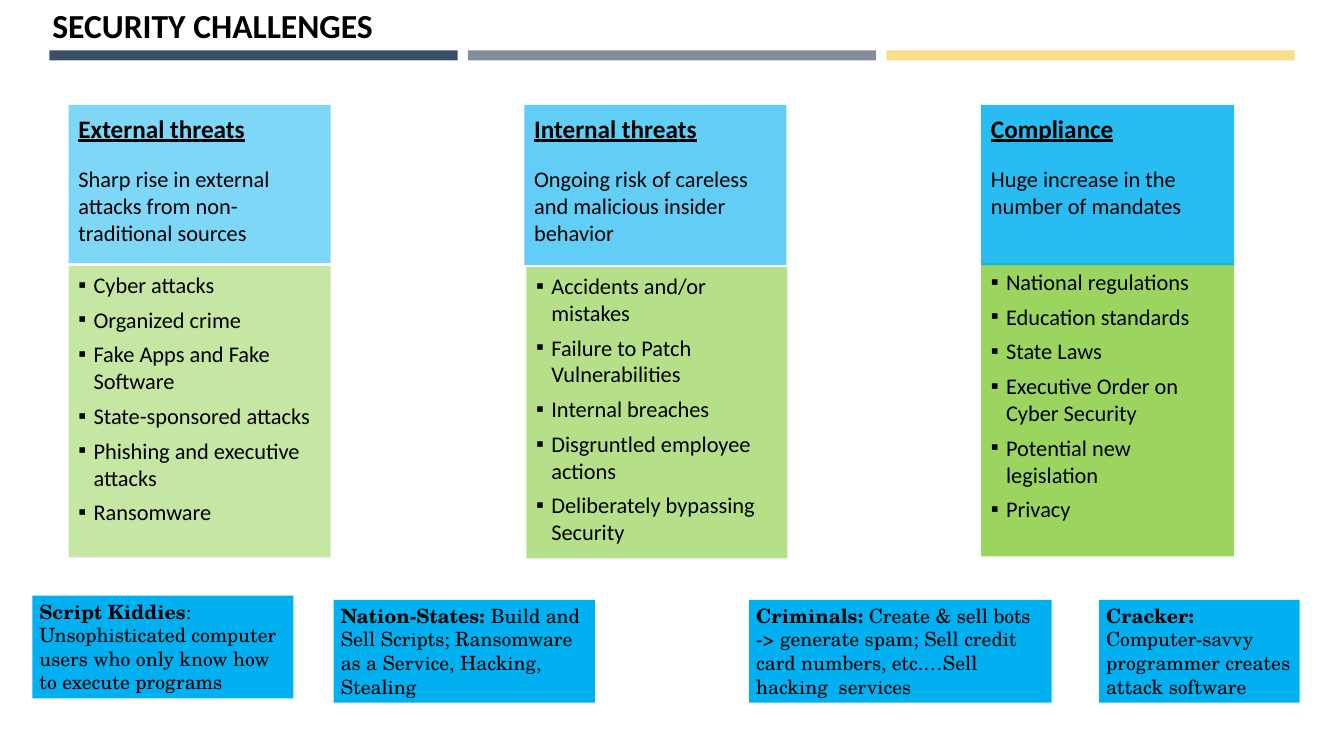
from pptx import Presentation
from pptx import util as u
from pptx.dml import color
from pptx.enum import shapes, text
from pptx.oxml import xmlchemy
from pptx.oxml import ns
from lxml import etree

PX = 9144  # EMU per px, 100 px to the inch
BLACK, BLUE, GREEN = "000000", "00B0F0", "92D050"

# Each box is left, top, width, height
THREATS = [
    {"title": "External threats",
     "summary": "Sharp rise in external attacks from non-traditional sources",
     "header_box": (68, 104, 260, 157), "header_opacity": 50,
     "list_box": (68, 264, 260, 289), "list_opacity": 52,
     "items": ["Cyber attacks", "Organized crime", "Fake Apps and Fake Software",
               "State-sponsored attacks", "Phishing and executive attacks", "Ransomware"]},
    {"title": "Internal threats",
     "summary": "Ongoing risk of careless and malicious insider behavior",
     "header_box": (520, 104, 260, 159), "header_opacity": 61,
     "list_box": (522, 265, 259, 289), "list_opacity": 67,
     "items": ["Accidents and/or mistakes", "Failure to Patch Vulnerabilities",
               "Internal breaches", "Disgruntled employee actions",
               "Deliberately bypassing Security"]},
    {"title": "Compliance",
     "summary": "Huge increase in the number of mandates",
     "header_box": (973, 104, 251, 159), "header_opacity": 84,
     "list_box": (973, 261, 251, 291), "list_opacity": 91,
     "items": ["National regulations", "Education standards", "State Laws",
               "Executive Order on Cyber Security", "Potential new legislation", "Privacy"]},
]

# Box, wrapping, and paragraphs of (text, bold) runs
ATTACKERS = [
    ((32, 591, 259, 102), True,
     [[("Script Kiddies", True), (":", False)],
      [("Unsophisticated computer users who only know how to execute programs", False)]]),
    ((331, 595, 259, 102), True,
     [[("Nation-States: ", True),
       ("Build and Sell Scripts; Ransomware as a Service, Hacking, Stealing", False)]]),
    ((743, 595, 300, 102), True,
     [[("Criminals: ", True),
       ("Create & sell bots -> generate spam; Sell credit card numbers, "
        "etc.…Sell hacking  services", False)]]),
    ((1090, 595, 199, 102), False,
     [[("Cracker:", True)], [("Computer-savvy", False)],
      [("programmer creates", False)], [("attack software", False)]]),
]


def rgb(value):
    return color.RGBColor.from_string(value)


def px(*lengths):
    return [u.Emu(length * PX) for length in lengths]


def add_panel(slide, box, fill, opacity=100, insets=(10, 5), wrap=True):
    """Add a borderless rectangle with top-anchored text and return it."""
    shape = slide.shapes.add_shape(shapes.MSO_SHAPE.RECTANGLE, *px(*box))
    shape.shadow.inherit = False
    shape.line.fill.background()
    shape.fill.solid()
    shape.fill.fore_color.rgb = rgb(fill)
    if opacity < 100:
        fill_color = shape.fill._xPr.find(".//" + ns.qn("a:srgbClr"))
        etree.SubElement(fill_color, ns.qn("a:alpha"), val=str(opacity * 1000))
    frame = shape.text_frame
    frame.word_wrap = wrap
    frame.vertical_anchor = text.MSO_ANCHOR.TOP
    frame.margin_left = frame.margin_right = px(insets[0])[0]
    frame.margin_top = frame.margin_bottom = px(insets[1])[0]
    return shape


def next_paragraph(frame, space_before=0):
    """Return the empty first paragraph, or a new one with space before it."""
    first = frame.paragraphs[0]
    paragraph = frame.add_paragraph() if first.runs else first
    paragraph.alignment = text.PP_ALIGN.LEFT
    paragraph.space_before = u.Pt(space_before if first.runs else 0)
    return paragraph


def add_text(paragraph, content, size=16, font="Calibri", bold=False, underline=False):
    run = paragraph.add_run()
    run.text = content
    run.font.size = u.Pt(size)
    run.font.name = font
    run.font.bold = bold
    run.font.underline = underline
    run.font.color.rgb = rgb(BLACK)


def add_bullet(paragraph, indent=15):
    properties = paragraph._p.get_or_add_pPr()
    properties.set("marL", str(indent * PX))
    properties.set("indent", str(-indent * PX))
    etree.SubElement(properties, ns.qn("a:buFont"), typeface="Arial")
    etree.SubElement(properties, ns.qn("a:buChar"), char="▪")


def add_title(slide, content):
    title = slide.shapes.title
    title.left, title.top, title.width, title.height = px(23, 0, 376, 50)
    title.text_frame.vertical_anchor = text.MSO_ANCHOR.MIDDLE
    paragraph = next_paragraph(title.text_frame)
    paragraph.alignment = text.PP_ALIGN.CENTER
    add_text(paragraph, content, size=24, bold=True)


def add_threat(slide, threat):
    items = add_panel(slide, threat["list_box"], GREEN, threat["list_opacity"])
    for item in threat["items"]:
        paragraph = next_paragraph(items.text_frame, space_before=5.6)
        add_bullet(paragraph)
        add_text(paragraph, item)
    header = add_panel(slide, threat["header_box"], BLUE, threat["header_opacity"], (10, 8))
    add_text(next_paragraph(header.text_frame), threat["title"],
             size=18, bold=True, underline=True)
    add_text(next_paragraph(header.text_frame, space_before=16), threat["summary"])


def add_attacker(slide, box, wrap, paragraphs):
    panel = add_panel(slide, box, BLUE, insets=(7, 4), wrap=wrap)
    panel.text_frame.auto_size = text.MSO_AUTO_SIZE.SHAPE_TO_FIT_TEXT
    for runs in paragraphs:
        paragraph = next_paragraph(panel.text_frame)
        for content, bold in runs:
            add_text(paragraph, content, size=14, font="TeX Gyre Schola", bold=bold)


def main():
    presentation = Presentation()
    presentation.slide_width, presentation.slide_height = px(1333, 750)
    slide = presentation.slides.add_slide(presentation.slide_layouts[5])
    add_title(slide, "SECURITY CHALLENGES")
    for column, fill in enumerate(["3A5068", "848D9A", "F8DF88"]):
        add_panel(slide, (49 + 415 * column, 50, 405, 10), fill)
    for threat in THREATS:
        add_threat(slide, threat)
    for box, wrap, paragraphs in ATTACKERS:
        add_attacker(slide, box, wrap, paragraphs)
    presentation.save("out.pptx")


if __name__ == "__main__":
    main()
